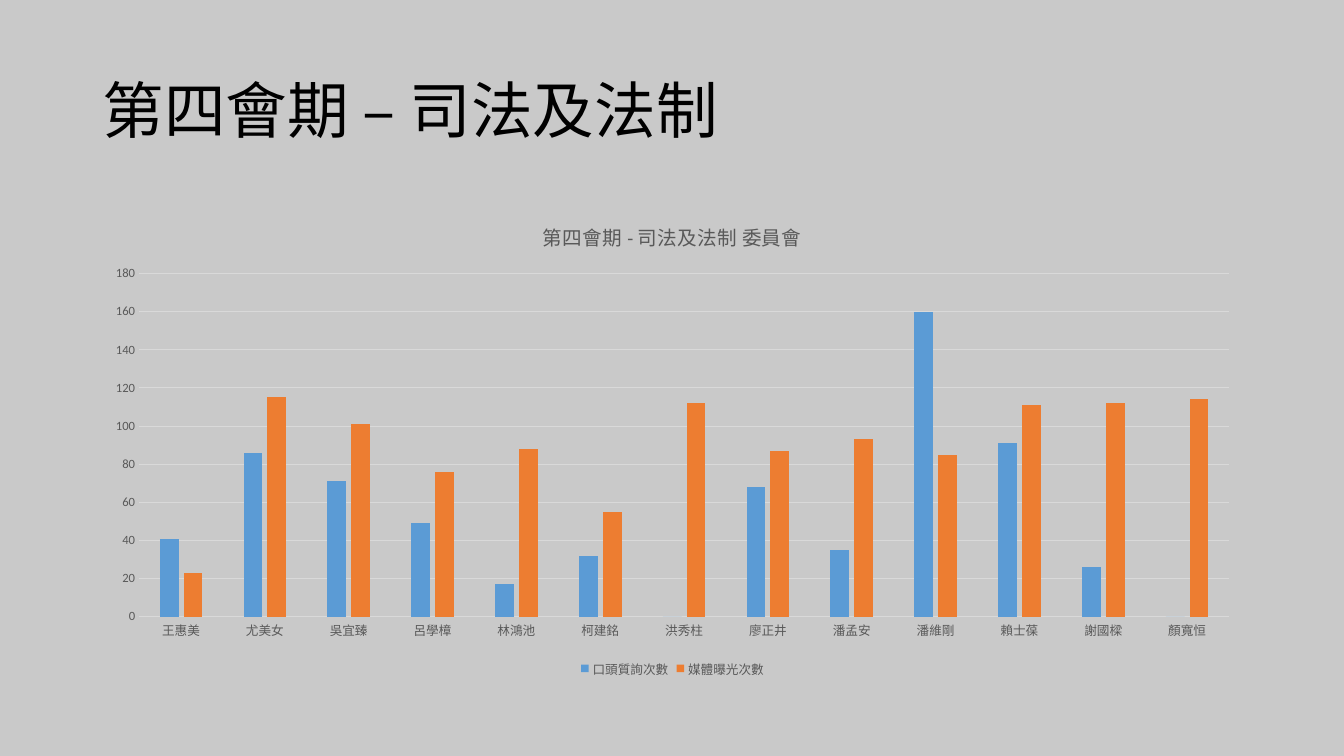
from lxml import etree
from pptx import Presentation
from pptx.chart.data import CategoryChartData
from pptx.dml.color import RGBColor
from pptx.enum.chart import XL_CHART_TYPE, XL_LEGEND_POSITION, XL_TICK_MARK
from pptx.enum.text import MSO_ANCHOR
from pptx.oxml.ns import qn
from pptx.util import Inches, Pt

CLUSTERED = XL_CHART_TYPE.COLUMN_CLUSTERED
BOTTOM = XL_LEGEND_POSITION.BOTTOM
NO_TICK = XL_TICK_MARK.NONE
MIDDLE = MSO_ANCHOR.MIDDLE

BACKGROUND = RGBColor(0xC9, 0xC9, 0xC9)
BLACK = RGBColor(0, 0, 0)
LABEL_GRAY = RGBColor(0x59, 0x59, 0x59)
LINE_GRAY = RGBColor(0xD9, 0xD9, 0xD9)
BLUE = RGBColor(0x5B, 0x9B, 0xD5)
ORANGE = RGBColor(0xED, 0x7D, 0x31)

TITLE_FONT = "Noto Sans CJK JP"
CHART_FONT = "Calibri"

LEGISLATORS = ["王惠美", "尤美女", "吳宜臻", "呂學樟", "林鴻池", "柯建銘", "洪秀柱",
               "廖正井", "潘孟安", "潘維剛", "賴士葆", "謝國樑", "顏寬恒"]
SERIES = [
    ("口頭質詢次數", BLUE, [41, 86, 71, 49, 17, 32, 0, 68, 35, 160, 91, 26, 0]),
    ("媒體曝光次數", ORANGE, [23, 115, 101, 76, 88, 55, 112, 87, 93, 85, 111, 112, 114]),
]


def style_font(font, size, color, name=CHART_FONT):
    font.size = Pt(size)
    font.bold = False
    font.name = name
    font.color.rgb = color


def style_line(line):
    line.color.rgb = LINE_GRAY
    line.width = Pt(0.75)


def add_title(slide, left, top, width, height):
    box = slide.shapes.add_textbox(left, top, width, height)
    frame = box.text_frame
    frame.word_wrap = True
    frame.vertical_anchor = MIDDLE
    para = frame.paragraphs[0]
    para.line_spacing = 0.9
    span = para.add_run()
    span.text = "第四會期 – 司法及法制"
    style_font(span.font, 44, BLACK, TITLE_FONT)
    # Chinese characters take the East Asian typeface
    properties = span.font._element
    etree.SubElement(properties, qn("a:ea")).set("typeface", TITLE_FONT)


def add_committee_chart(slide, left, top, width, height):
    data = CategoryChartData()
    data.categories = LEGISLATORS
    for name, _, values in SERIES:
        data.add_series(name, values)
    chart = slide.shapes.add_chart(CLUSTERED, left, top, width, height, data).chart
    style_font(chart.font, 10, BLACK)

    chart.has_title = True
    heading = chart.chart_title.text_frame
    heading.text = "第四會期 - 司法及法制 委員會"
    style_font(heading.paragraphs[0].font, 14, LABEL_GRAY)
    chart.chart_title.include_in_layout = False

    chart.has_legend = True
    chart.legend.position = BOTTOM
    chart.legend.include_in_layout = False
    style_font(chart.legend.font, 9, LABEL_GRAY)

    for axis in (chart.category_axis, chart.value_axis):
        axis.major_tick_mark = axis.minor_tick_mark = NO_TICK
        style_font(axis.tick_labels.font, 9, LABEL_GRAY)
    style_line(chart.category_axis.format.line)
    chart.value_axis.format.line.fill.background()
    style_line(chart.value_axis.major_gridlines.format.line)

    plot = chart.plots[0]
    plot.gap_width = 219
    plot.overlap = -27
    plot.vary_by_categories = False
    for series, (_, color, _) in zip(plot.series, SERIES):
        series.format.fill.solid()
        series.format.fill.fore_color.rgb = color


def main():
    deck = Presentation()
    deck.slide_width = Inches(13.33)
    deck.slide_height = Inches(7.5)
    slide = deck.slides.add_slide(deck.slide_layouts[6])
    slide.background.fill.solid()
    slide.background.fill.fore_color.rgb = BACKGROUND

    left, width = Inches(0.92), Inches(11.5)
    add_title(slide, left, Inches(0.4), width, Inches(1.45))
    add_committee_chart(slide, left, Inches(2), width, Inches(4.76))
    deck.save("out.pptx")


if __name__ == "__main__":
    main()
